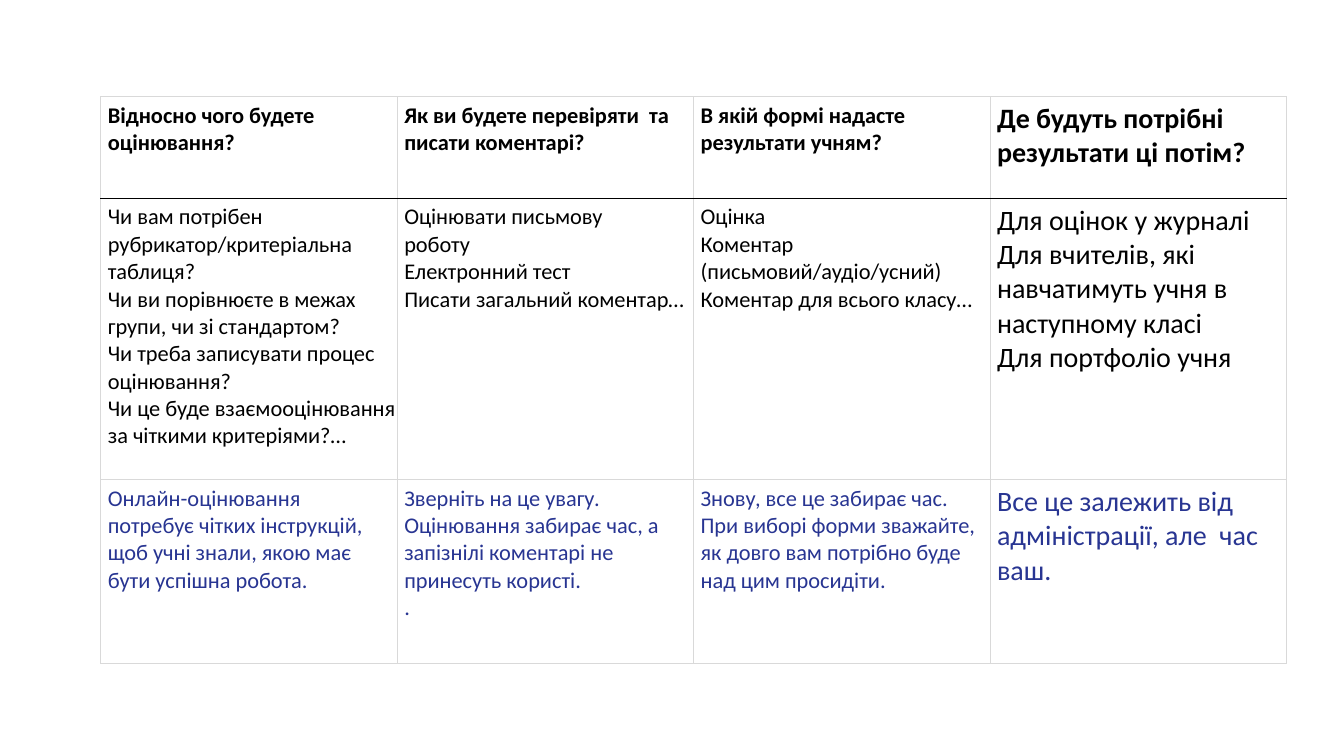
from dataclasses import dataclass

from lxml.etree import SubElement
from pptx import Presentation
from pptx.dml.color import RGBColor as Rgb
from pptx.oxml.ns import qn
from pptx.util import Inches, Pt


@dataclass(frozen=True)
class Theme:
    font: str = "Calibri"
    text: str = "000000"
    advice: str = "283592"
    grid: str = "D9D9D9"
    header_rule: str = "000000"
    panel: str = "FFFFFF"
    body_size: int = 16
    large_size: int = 20
    rule_width: float = 0.75
    space_before: int = 4


# Content: one list of paragraphs per cell
QUESTIONS = [
    ["Відносно чого будете оцінювання?"],
    ["Як ви будете перевіряти  та писати коментарі?"],
    ["В якій формі надасте", "результати учням?"],
    ["Де будуть потрібні", "результати ці потім?"],
]
OPTIONS = [
    ["Чи вам потрібен рубрикатор/критеріальна таблиця?",
     "Чи ви порівнюєте в межах групи, чи зі стандартом?",
     "Чи треба записувати процес оцінювання?",
     "Чи це буде взаємооцінювання за чіткими критеріями?…"],
    ["Оцінювати письмову", "роботу", "Електронний тест",
     "Писати загальний коментар…"],
    ["Оцінка", "Коментар",
     "(письмовий/аудіо/усний) Коментар для всього класу…"],
    ["Для оцінок у журналі",
     "Для вчителів, які навчатимуть учня в наступному класі",
     "Для портфоліо учня"],
]
ADVICE = [
    ["Онлайн-оцінювання",
     "потребує чітких інструкцій, щоб учні знали, якою має бути успішна робота."],
    ["Зверніть на це увагу.",
     "Оцінювання забирає час, а запізнілі коментарі не",
     "принесуть користі.", "."],
    ["Знову, все це забирає час.",
     "При виборі форми зважайте, як довго вам потрібно буде над цим просидіти."],
    ["Все це залежить від", "адміністрації, але  час ваш."],
]


class SlideBuilder:
    def __init__(self, slide, theme):
        self.slide = slide
        self.theme = theme

    def table(self, left, top, column_width, row_heights, rows):
        columns = len(rows[0])
        frame = self.slide.shapes.add_table(
            len(rows), columns, Inches(left), Inches(top),
            Inches(column_width * columns), Inches(sum(row_heights)))
        grid = frame.table
        grid.first_row = grid.horz_banding = False
        for column in grid.columns:
            column.width = Inches(column_width)
        for row, height in zip(grid.rows, row_heights):
            row.height = Inches(height)
        return grid

    def borders(self, cell, colours):
        properties = cell._tc.get_or_add_tcPr()
        for side, colour in colours.items():
            line = SubElement(properties, qn(f"a:ln{side}"),
                              w=str(Pt(self.theme.rule_width)))
            fill = SubElement(line, qn("a:solidFill"))
            SubElement(fill, qn("a:srgbClr"), val=colour)

    def cell_text(self, cell, paragraphs, size, colour, bold):
        margins = {"margin_left": Inches(0.07), "margin_top": Inches(0.05),
                   "margin_right": 0, "margin_bottom": 0}
        for name, value in margins.items():
            setattr(cell, name, value)
        font_format = {"name": self.theme.font, "size": Pt(size), "bold": bold}
        body = cell.text_frame
        body.text = "\n".join(paragraphs)
        body.paragraphs[0].space_before = Pt(self.theme.space_before)
        for paragraph in body.paragraphs:
            for run in paragraph.runs:
                for name, value in font_format.items():
                    setattr(run.font, name, value)
                run.font.color.rgb = Rgb.from_string(colour)

    def cell_fill(self, cell, colour=None):
        if colour:
            cell.fill.solid()
            cell.fill.fore_color.rgb = Rgb.from_string(colour)
        else:
            cell.fill.background()


def main():
    deck = Presentation()
    deck.slide_width, deck.slide_height = Inches(13.33), Inches(7.5)
    theme = Theme()
    builder = SlideBuilder(deck.slides.add_slide(deck.slide_layouts[6]), theme)

    # Assessment planning table
    rows = [QUESTIONS, OPTIONS, ADVICE]
    planner = builder.table(1, 0.96, 2.94, [1.01, 2.79, 1.82], rows)

    # Cells: bold questions, plain options, blue advice; last column larger
    for row_index, row in enumerate(rows):
        colour = theme.advice if row is ADVICE else theme.text
        edges = dict.fromkeys("LRTB", theme.grid)
        if row is QUESTIONS:
            edges["B"] = theme.header_rule
        elif row is OPTIONS:
            edges["T"] = theme.header_rule
        for column_index, paragraphs in enumerate(row):
            cell = planner.cell(row_index, column_index)
            is_last = column_index == len(row) - 1
            size = theme.large_size if is_last else theme.body_size
            builder.borders(cell, edges)
            builder.cell_fill(cell, theme.panel if is_last else None)
            builder.cell_text(cell, paragraphs, size, colour, row is QUESTIONS)

    deck.save("out.pptx")


if __name__ == "__main__":
    main()
